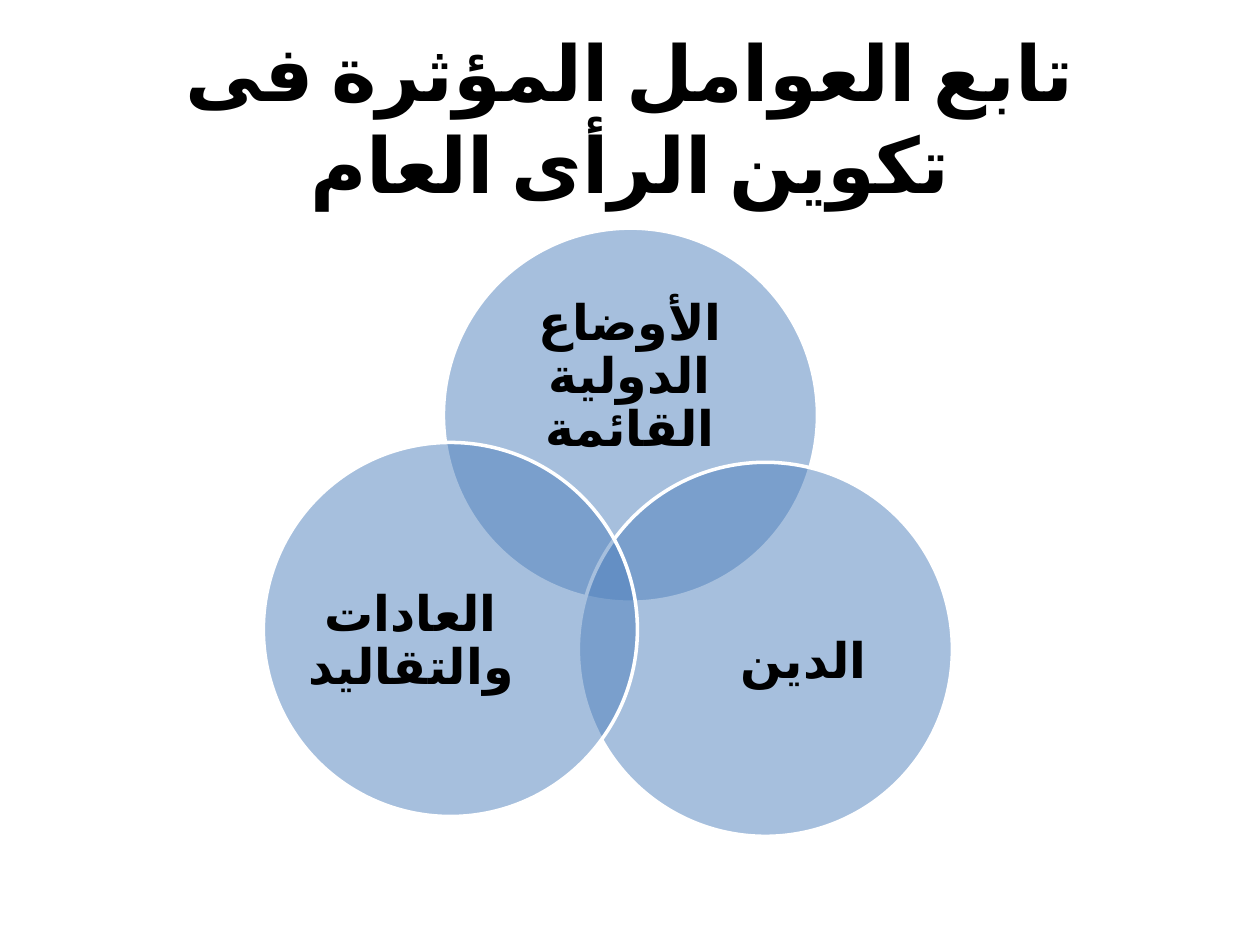
"""Build a slide with a title over three overlapping labelled circles."""
import pptx
import pptx.dml.color
import pptx.enum.lang
import pptx.enum.shapes
import pptx.enum.text
import pptx.oxml
import pptx.oxml.ns
import pptx.util
from pptx.util import Cm

BLACK = pptx.dml.color.RGBColor(0x00, 0x00, 0x00)
WHITE = pptx.dml.color.RGBColor(0xFF, 0xFF, 0xFF)
BLUE = pptx.dml.color.RGBColor(0x4F, 0x81, 0xBD)
DIAMETER = 7.54


class VennPage:
    font_name = "Calibri"
    language = pptx.enum.lang.MSO_LANGUAGE_ID.ARABIC_EGYPT

    def __init__(self, page):
        self.page = page

    def text(self, words, left, top, width, height, size, inset, spacing):
        box = self.page.shapes.add_textbox(Cm(left), Cm(top), Cm(width), Cm(height))
        frame = box.text_frame
        frame.word_wrap = True
        frame.vertical_anchor = pptx.enum.text.MSO_ANCHOR.MIDDLE
        frame.margin_left = frame.margin_right = Cm(inset)
        frame.margin_top = frame.margin_bottom = Cm(inset / 2)
        para = frame.paragraphs[0]
        span = para.add_run()
        span.text = words
        span.font.language_id = self.language
        para.alignment = pptx.enum.text.PP_ALIGN.CENTER
        para.line_spacing = spacing
        para._p.get_or_add_pPr().set("rtl", "1")
        para.font.name = self.font_name
        para.font.size = pptx.util.Pt(size)
        para.font.bold = True
        para.font.color.rgb = BLACK
        complex_font = pptx.oxml.parse_xml(
            f'<a:cs {pptx.oxml.ns.nsdecls("a")} typeface="{self.font_name}"/>')
        para.font._rPr.append(complex_font)

    def title(self, words):
        self.text(words, 1.27, 0.76, 22.86, 3.18, size=44, inset=0.25, spacing=1.0)

    def label(self, words, left, top, width, height):
        self.text(words, left, top, width, height, size=28, inset=0, spacing=0.9)

    def circle(self, left, top):
        shape = self.page.shapes.add_shape(
            pptx.enum.shapes.MSO_SHAPE.OVAL,
            Cm(left), Cm(top), Cm(DIAMETER), Cm(DIAMETER))
        shape.shadow.inherit = False
        shape.fill.solid()
        shape.fill.fore_color.rgb = BLUE
        color = shape.fill._xPr.find(".//" + pptx.oxml.ns.qn("a:srgbClr"))
        alpha = pptx.oxml.parse_xml(
            f'<a:alpha {pptx.oxml.ns.nsdecls("a")} val="50000"/>')
        color.append(alpha)
        shape.line.color.rgb = WHITE
        shape.line.width = pptx.util.Pt(2)


def main():
    deck = pptx.Presentation()
    deck.slide_width, deck.slide_height = Cm(25.4), Cm(19.05)
    venn = VennPage(deck.slides.add_slide(deck.slide_layouts[6]))
    venn.title("تابع العوامل المؤثرة فى تكوين الرأى العام")
    factors = [
        ("الأوضاع الدولية القائمة", (8.94, 4.6), (9.93, 5.92, 5.54, 3.4)),
        ("الدين", (11.66, 9.32), (13.94, 11.28, 4.52, 4.14)),
        ("العادات والتقاليد", (5.31, 8.92), (6.02, 10.87, 4.52, 4.14)),
    ]
    for words, corner, area in factors:
        venn.circle(*corner)
        venn.label(words, *area)
    deck.save("out.pptx")


if __name__ == "__main__":
    main()
